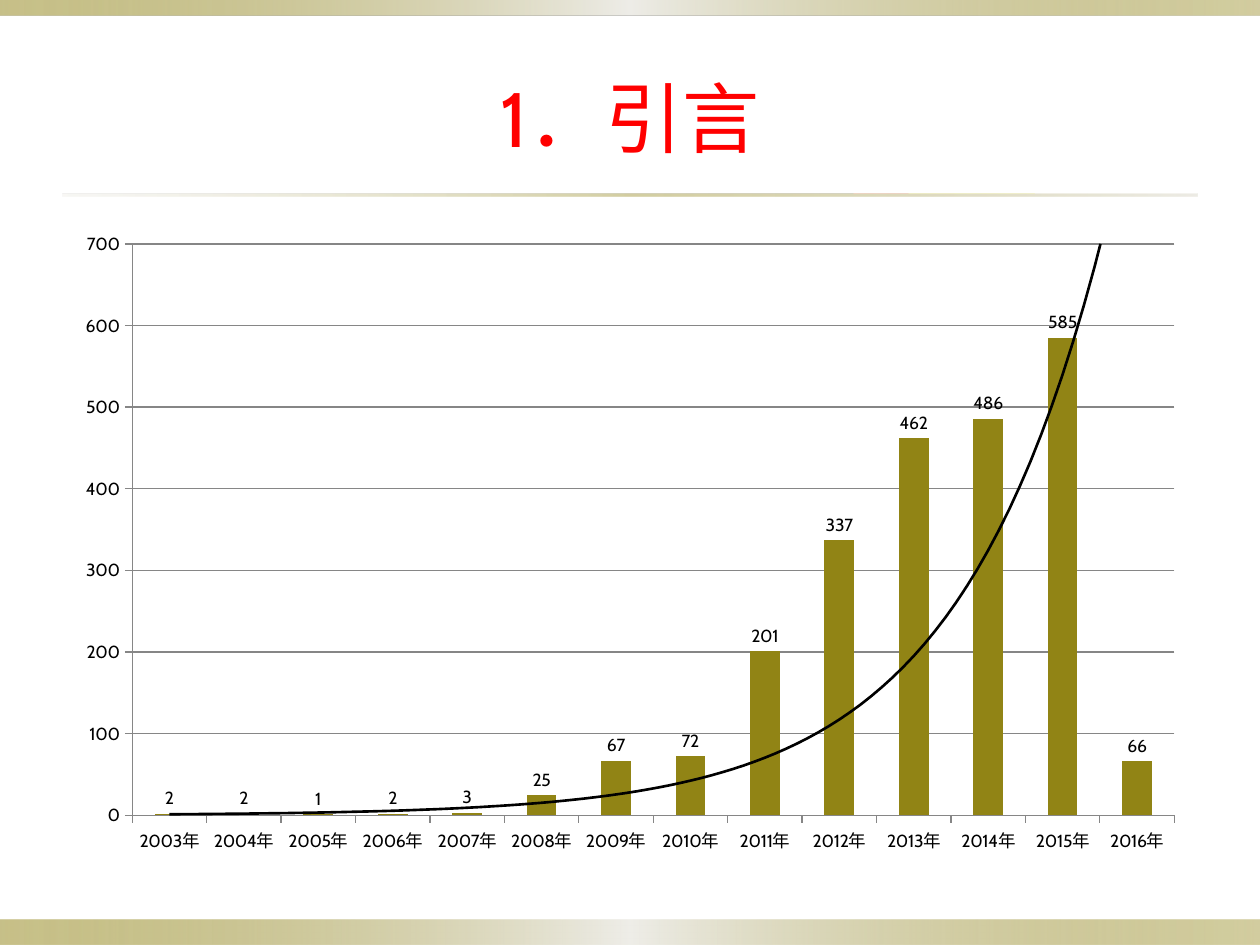
from lxml import etree
from pptx import Presentation
from pptx import util as u
from pptx.chart.data import CategoryChartData
from pptx.dml.color import RGBColor
from pptx.enum import chart as ch, shapes, text
from pptx.oxml import parse_xml
from pptx.oxml.ns import nsdecls, qn

TITLE = "1．引言"
FONT = "Cabin"
COL = {"olive": "918415", "pale": "EEEDE8", "sand": "DCD9CC",
       "red": "FF0000", "black": "000000", "grey": "868686"}
FIRST = 2003
COUNTS = [2, 2, 1, 2, 3, 25, 67, 72, 201, 337, 462, 486, 585, 66]

# gradient stops: position %, colour, opacity %
BAND = [(0, "olive", 50), (50, "pale", 100), (100, "olive", 40)]
RULE = [(0, "sand", 20), (50, "olive", 40), (100, "sand", 50)]
STRIPS = [((0, 7.3, 10, 0.2), BAND),
          ((0, 0, 10, 0.12), BAND),
          ((0.5, 1.54, 9, 0.02), RULE)]


def rgb(name):
    return RGBColor.from_string(COL[name])


def style(font, size, color):
    for key, val in {"name": FONT, "size": u.Pt(size)}.items():
        setattr(font, key, val)
    font.color.rgb = rgb(color)


def blend(shape, stops):
    """Fill a shape with a left-to-right gradient of see-through stops."""
    marks = "".join(
        f'<a:gs pos="{pos * 1000}"><a:srgbClr val="{COL[name]}">'
        f'<a:alpha val="{alpha * 1000}"/></a:srgbClr></a:gs>'
        for pos, name, alpha in stops)
    grad = parse_xml(f'<a:gradFill {nsdecls("a")} rotWithShape="1"><a:gsLst>{marks}'
                     '</a:gsLst><a:lin ang="0" scaled="1"/></a:gradFill>')
    shape.fill.background()
    props = shape.fill._xPr
    props.replace(props.find(qn("a:noFill")), grad)


def add_trend(series):
    """Lay an exponential trend line over a series."""
    trend = parse_xml(
        f'<c:trendline {nsdecls("c", "a")}><c:spPr><a:ln w="19050"><a:solidFill>'
        f'<a:srgbClr val="{COL["black"]}"/></a:solidFill></a:ln></c:spPr>'
        '<c:trendlineType val="exp"/><c:dispRSqr val="0"/><c:dispEq val="0"/>'
        '</c:trendline>')
    series._element.find(qn("c:cat")).addprevious(trend)


def add_strips(slide):
    for box, stops in STRIPS:
        strip = slide.shapes.add_shape(shapes.MSO_SHAPE.RECTANGLE, *map(u.Inches, box))
        strip.shadow.inherit = False
        strip.line.fill.background()
        blend(strip, stops)


def add_title(slide):
    box = slide.shapes.add_textbox(*map(u.Inches, (0.5, 0.3, 9, 1.25)))
    frame = box.text_frame
    frame.word_wrap = True
    frame.vertical_anchor = text.MSO_ANCHOR.MIDDLE
    para = frame.paragraphs[0]
    para.alignment = text.PP_ALIGN.CENTER
    run = para.add_run()
    run.text = TITLE
    style(run.font, 44, "red")


def add_graph(slide):
    data = CategoryChartData()
    data.categories = [f"{FIRST + i}年" for i in range(len(COUNTS))]
    data.add_series("Series 1", COUNTS)
    chart = slide.shapes.add_chart(ch.XL_CHART_TYPE.COLUMN_CLUSTERED,
                                   *map(u.Inches, (0.5, 1.75, 9, 5.12)), data).chart
    chart.has_title = chart.has_legend = False
    style(chart.font, 10, "black")

    plot = chart.plots[0]
    plot.gap_width = 150
    plot.vary_by_categories = False
    bars = plot.series[0]
    bars.format.fill.solid()
    bars.format.fill.fore_color.rgb = rgb("olive")
    labels = bars.data_labels
    labels.show_value = True
    labels.position = ch.XL_LABEL_POSITION.OUTSIDE_END
    style(labels.font, 10, "black")
    add_trend(bars)

    value = chart.value_axis
    value.minimum_scale, value.maximum_scale, value.major_unit = 0, 700, 100
    value.has_major_gridlines = True
    for axis in (chart.category_axis, value):
        axis.major_tick_mark = ch.XL_TICK_MARK.OUTSIDE
        style(axis.tick_labels.font, 10, "black")
    for part in (chart.category_axis, value, value.major_gridlines):
        part.format.line.color.rgb = rgb("grey")
        part.format.line.width = u.Pt(0.75)


def main():
    deck = Presentation()
    deck.slide_width, deck.slide_height = u.Inches(10), u.Inches(7.5)
    slide = deck.slides.add_slide(deck.slide_layouts[6])
    add_strips(slide)
    add_title(slide)
    add_graph(slide)
    deck.save("out.pptx")


if __name__ == "__main__":
    main()
